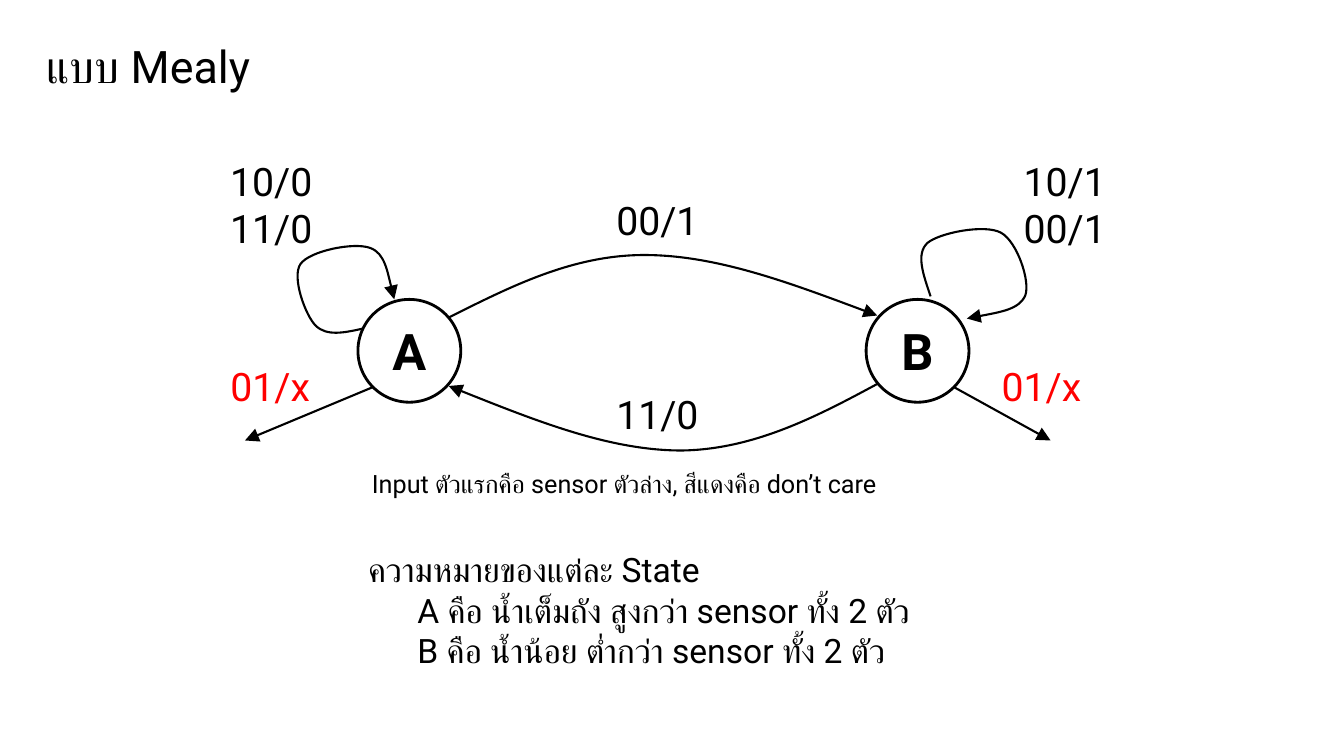
"""Build the Mealy state diagram slide with its two states and legend."""
from dataclasses import dataclass

from lxml.etree import SubElement
from pptx import Presentation
from pptx.dml.color import RGBColor
from pptx.enum.shapes import MSO_CONNECTOR, MSO_SHAPE
from pptx.enum.text import MSO_ANCHOR, MSO_AUTO_SIZE, PP_ALIGN
from pptx.oxml.ns import qn
from pptx.util import Inches, Pt


@dataclass(frozen=True)
class Theme:
    font: str = "Roboto"
    ink: RGBColor = RGBColor(0, 0, 0)
    red: RGBColor = RGBColor(255, 0, 0)
    title: int = 32
    state: int = 36
    label: int = 28
    body: int = 24
    note: int = 18
    ring: float = 2
    arrow: float = 1.5


T = Theme()


def write(s, lines, size, color=T.ink, align=PP_ALIGN.LEFT, bold=False):
    tf = s.text_frame
    tf.word_wrap = True
    for i, line in enumerate(lines):
        p = tf.add_paragraph() if i else tf.paragraphs[0]
        p.text = line
        p.alignment = align
        p.space_before = Pt(0)
        p.font.name, p.font.size, p.font.bold = T.font, Pt(size), bold
        p.font.color.rgb = color
    return tf


def style_arrow(s):
    s.line.color.rgb = T.ink
    s.line.width = Pt(T.arrow)
    ln = s._element.spPr.find(qn("a:ln"))
    SubElement(ln, qn("a:tailEnd"), type="triangle", w="lg", len="lg")


prs = Presentation()
prs.slide_width, prs.slide_height = Inches(13.33), Inches(7.5)
slide = prs.slides.add_slide(prs.slide_layouts[1])
shapes = slide.shapes

title, body = shapes.title, slide.placeholders[1]
for s, box in ((title, (0.36, 0.33, 2.78, 0.64)), (body, (3.55, 5.4, 6.63, 1.31))):
    s.left, s.top, s.width, s.height = map(Inches, box)
    s.text_frame.auto_size = MSO_AUTO_SIZE.NONE
    s.text_frame.vertical_anchor = MSO_ANCHOR.TOP

write(title, ["แบบ Mealy"], T.title)
meaning = ["ความหมายของแต่ละ State",
           "A คือ น้ำเต็มถัง สูงกว่า sensor ทั้ง 2 ตัว",
           "B คือ น้ำน้อย ต่ำกว่า sensor ทั้ง 2 ตัว"]
tf = write(body, meaning, T.body)
for p, indent in zip(tf.paragraphs, (0, 0.49, 0.49)):
    pPr = p._p.get_or_add_pPr()
    pPr.set("marL", str(Inches(indent)))
    pPr.set("indent", "0")
    pPr.insert_element_before(pPr.makeelement(qn("a:buNone")), "a:tabLst", "a:defRPr")

for name, left in (("A", 3.55), ("B", 8.59)):
    s = shapes.add_shape(MSO_SHAPE.OVAL, Inches(left), Inches(2.97), Inches(1.02), Inches(1.02))
    s.shadow.inherit = False
    s.fill.background()
    s.line.color.rgb = T.ink
    s.line.width = Pt(T.ring)
    write(s, [name], T.state, align=PP_ALIGN.CENTER, bold=True)
    s.text_frame.vertical_anchor = MSO_ANCHOR.MIDDLE

a_to_b = [(4.45, 3.15), (5.07, 2.84), (5.68, 2.53), (6.39, 2.53),
          (7.1, 2.53), (7.9, 2.83), (8.7, 3.13)]
b_to_a = [(8.7, 3.81), (8.09, 4.14), (7.47, 4.46), (6.76, 4.47),
          (6.05, 4.47), (5.25, 4.15), (4.45, 3.83)]
a_loop = [(3.6, 3.26), (3.42, 3.3), (3.24, 3.34), (3.13, 3.23),
          (3.03, 3.13), (2.89, 2.75), (2.98, 2.62),
          (3.07, 2.49), (3.51, 2.4), (3.67, 2.46),
          (3.82, 2.51), (3.91, 2.97), (3.91, 2.97)]
b_loop = [(9.23, 2.94), (9.16, 2.73), (9.08, 2.52), (9.2, 2.41),
          (9.32, 2.31), (9.77, 2.22), (9.93, 2.31),
          (10.09, 2.4), (10.22, 2.79), (10.17, 2.93),
          (10.11, 3.07), (9.85, 3.11), (9.59, 3.16)]
for curve in (a_to_b, b_to_a, a_loop, b_loop):
    start, *controls = [(Inches(x), Inches(y)) for x, y in curve]
    builder = shapes.build_freeform(*start)
    builder.add_line_segments(controls, close=False)
    s = builder.convert_to_shape()
    s.shadow.inherit = False
    s.fill.background()
    style_arrow(s)
    segments = list(s._element.iter(qn("a:lnTo")))
    outline = segments[0].getparent()
    for i in range(0, len(segments), 3):
        bezier = SubElement(outline, qn("a:cubicBezTo"))
        for segment in segments[i:i + 3]:
            bezier.append(segment[0])
            outline.remove(segment)

for x1, x2 in ((3.7, 2.43), (9.46, 10.42)):
    s = shapes.add_connector(MSO_CONNECTOR.STRAIGHT, Inches(x1), Inches(3.84), Inches(x2), Inches(4.37))
    style_arrow(s)
    SubElement(s._element.spPr, qn("a:effectLst"))

center, left = PP_ALIGN.CENTER, PP_ALIGN.LEFT
labels = [
    ("00/1", (5.9, 1.9, 1.24, 0.57), T.label, T.ink, center),
    ("11/0", (5.9, 3.82, 1.24, 0.57), T.label, T.ink, center),
    ("01/x", (2.06, 3.55, 1.24, 0.57), T.label, T.red, center),
    ("01/x", (9.71, 3.55, 1.24, 0.57), T.label, T.red, center),
    ("10/0\n11/0", (2.07, 1.51, 1.24, 1.04), T.label, T.ink, center),
    ("10/1\n00/1", (9.94, 1.51, 1.24, 1.04), T.label, T.ink, center),
    ("Input ตัวแรกคือ sensor ตัวล่าง, สีแดงคือ don’t care",
     (3.59, 4.6, 5.86, 0.4), T.note, T.ink, left),
]
for text, box, size, color, align in labels:
    s = shapes.add_textbox(*map(Inches, box))
    tf = write(s, [text], size, color, align)
    tf.auto_size = MSO_AUTO_SIZE.SHAPE_TO_FIT_TEXT

prs.save("out.pptx")
